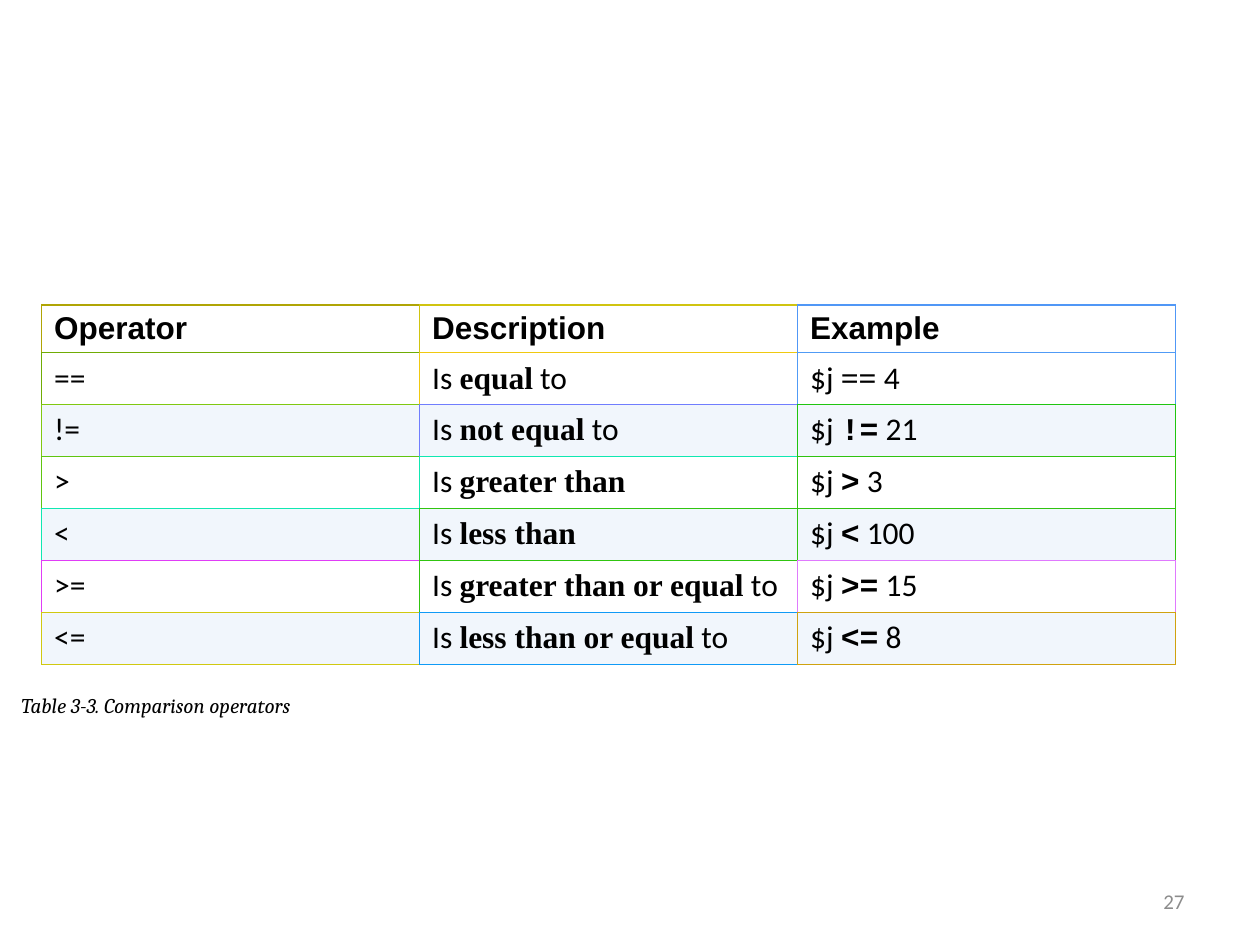
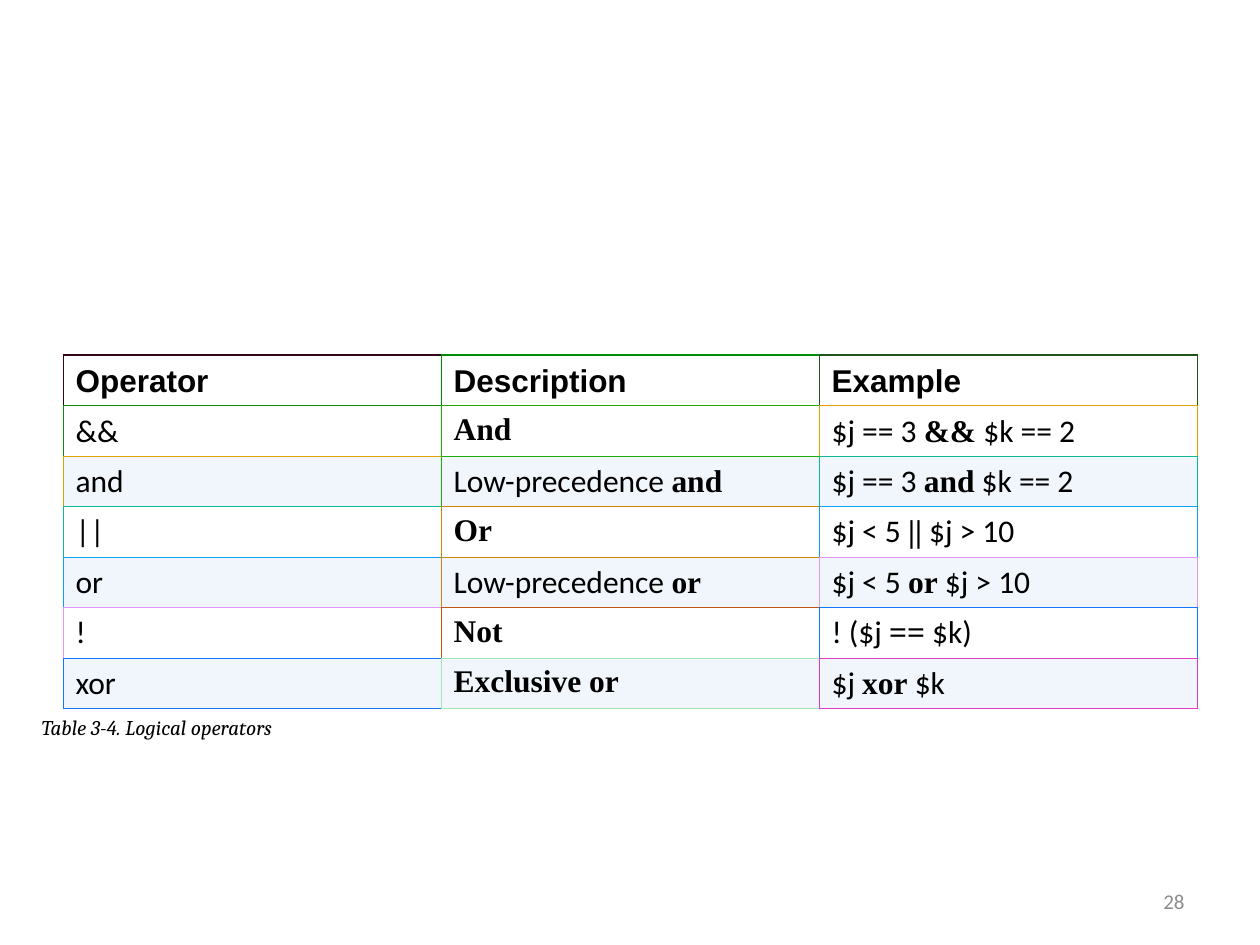
from dataclasses import dataclass

from lxml import etree
from pptx import Presentation
from pptx.dml.color import RGBColor
from pptx.enum.text import MSO_ANCHOR, PP_ALIGN
from pptx.oxml.ns import qn
from pptx.util import Inches, Pt

MIDDLE = MSO_ANCHOR.MIDDLE
BOTTOM = MSO_ANCHOR.BOTTOM
TOP = MSO_ANCHOR.TOP
LEFT = PP_ALIGN.LEFT
RIGHT = PP_ALIGN.RIGHT

BLACK = RGBColor(0x00, 0x00, 0x00)
PAGE_GRAY = RGBColor(0x8C, 0x8C, 0x8C)
BAND_BLUE = RGBColor(0xF1, 0xF6, 0xFC)

HEADER_FONT = "Arial"
BODY_FONT = "Calibri"
CAPTION_FONT = "Cambria"
BOLD_FONTS = {"*": "Times New Roman", "`": "Courier New"}

HEADERS = ("Operator", "Description", "Example")
COLUMN_WIDTH = 3
HEADER_HEIGHT = 0.38
ROW_HEIGHT = 0.4
BLANK_LAYOUT = 6


def border_grid(*rows: str) -> list[list[RGBColor]]:
    return [[RGBColor.from_string(value) for value in row.split()] for row in rows]


COMPARISON_BORDERS = border_grid(
    "B0A505 D0C410 5097F6",
    "70AC05 F0C910 509BF6",
    "80C810 707DFE 20C510",
    "60C510 10E8B1 30C310",
    "10E8B1 30C510 30C310",
    "E03DF6 30C510 E079FE",
    "D0C910 109AF6 D0A20F",
)
LOGICAL_BORDERS = border_grid(
    "30071A 008D0A 20541D",
    "108D0A 20AD05 E0A105",
    "E0A105 20AD05 10B897",
    "10B897 D0850A 109FF6",
    "109FF6 D0850A E097F6",
    "E097F6 C0570E 1077FE",
    "1077FE A0E7B1 E03BC2",
)


@dataclass(frozen=True)
class OperatorSlide:
    number: int
    caption: str
    caption_left: float
    caption_top: float
    table_left: float
    table_top: float
    borders: list[list[RGBColor]]
    rows: tuple[tuple[str, str, str], ...]


OPERATOR_SLIDES = (
    OperatorSlide(
        27, "Table 3-3. Comparison operators", 0.17, 5.5, 0.33, 2.42, COMPARISON_BORDERS,
        (
            ("==", "Is *equal* to", "$j *==* 4"),
            ("!=", "Is *not equal* to", "$j `!=` 21"),
            (">", "Is *greater than*", "$j `>` 3"),
            ("<", "Is *less than*", "$j `<` 100"),
            (">=", "Is *greater than or equal* to", "$j `>=` 15"),
            ("<=", "Is *less than or equal* to", "$j `<=` 8"),
        ),
    ),
    OperatorSlide(
        28, "Table 3-4. Logical operators", 0.33, 5.67, 0.5, 2.82, LOGICAL_BORDERS,
        (
            ("&&", "*And*", "$j == 3 *&&* $k == 2"),
            ("and", "Low-precedence *and*", "$j == 3 *and* $k == 2"),
            ("||", "*Or*", "$j < 5 *||* $j > 10"),
            ("or", "Low-precedence *or*", "$j < 5 *or* $j > 10"),
            ("!", "*Not*", "! ($j *==* $k)"),
            ("xor", "*Exclusive or*", "$j *xor* $k"),
        ),
    ),
)


def add_label(slide, text: str, box: tuple[float, float, float, float], font_name: str,
              color: RGBColor, alignment=LEFT, italic: bool = False, inset: float = 0) -> None:
    frame = slide.shapes.add_textbox(*map(Inches, box)).text_frame
    frame.word_wrap = True
    frame.vertical_anchor = MIDDLE
    frame.margin_left = frame.margin_right = Inches(inset)
    frame.margin_top = frame.margin_bottom = 0
    paragraph = frame.paragraphs[0]
    paragraph.text = text
    paragraph.alignment = alignment
    paragraph.font.name = font_name
    paragraph.font.size = Pt(12)
    paragraph.font.italic = italic
    paragraph.font.color.rgb = color


def write_cell(cell, text: str, is_header: bool) -> None:
    paragraph = cell.text_frame.paragraphs[0]
    paragraph.font.size = Pt(18)
    paragraph.font.color.rgb = BLACK
    cell.vertical_anchor = BOTTOM if is_header else TOP
    if is_header:
        paragraph.text = text
        paragraph.font.name = HEADER_FONT
        paragraph.font.bold = True
        return
    marker = next((mark for mark in BOLD_FONTS if mark in text), "*")
    for index, part in enumerate(text.split(marker)):
        if part:
            is_bold = index % 2 == 1
            run = paragraph.add_run()
            run.text = part
            run.font.name = BOLD_FONTS[marker] if is_bold else BODY_FONT
            run.font.bold = is_bold


def set_border(cell, side: str, color: RGBColor, width: float) -> None:
    properties = cell._tc.get_or_add_tcPr()
    line = etree.SubElement(properties, qn(f"a:ln{side}"), w=str(Pt(width)))
    fill = etree.SubElement(line, qn("a:solidFill"))
    etree.SubElement(fill, qn("a:srgbClr"), val=str(color))


def outline_cell(cell, borders: list[list[RGBColor]], row: int, column: int) -> None:
    last_row, last_column = len(borders) - 1, len(borders[row]) - 1
    own_color = borders[row][column]
    right_color = borders[row][min(column + 1, last_column)]
    below_color = borders[min(row + 1, last_row)][column]
    set_border(cell, "L", own_color, 0.5)
    set_border(cell, "R", right_color, 0.5)
    set_border(cell, "T", own_color, 1.5 if row == 0 else 0.5)
    set_border(cell, "B", below_color, 0.75 if row == last_row else 0.5)


def add_operator_table(slide, content: OperatorSlide) -> None:
    rows = (HEADERS, *content.rows)
    height = HEADER_HEIGHT + ROW_HEIGHT * len(content.rows)
    table = slide.shapes.add_table(
        len(rows), len(HEADERS), Inches(content.table_left), Inches(content.table_top),
        Inches(COLUMN_WIDTH * len(HEADERS)), Inches(height),
    ).table
    table.first_row = False
    table.horz_banding = False
    for row, texts in enumerate(rows):
        table.rows[row].height = Inches(ROW_HEIGHT if row else HEADER_HEIGHT)
        for column, text in enumerate(texts):
            cell = table.cell(row, column)
            write_cell(cell, text, row == 0)
            outline_cell(cell, content.borders, row, column)
            if row and row % 2 == 0:
                cell.fill.solid()
                cell.fill.fore_color.rgb = BAND_BLUE
            else:
                cell.fill.background()


def main() -> None:
    presentation = Presentation()
    presentation.slide_width = Inches(10)
    presentation.slide_height = Inches(7.5)
    for content in OPERATOR_SLIDES:
        slide = presentation.slides.add_slide(presentation.slide_layouts[BLANK_LAYOUT])
        add_operator_table(slide, content)
        add_label(slide, content.caption, (content.caption_left, content.caption_top, 4, 0.2),
                  CAPTION_FONT, BLACK, italic=True)
        add_label(slide, str(content.number), (7.17, 6.95, 2.33, 0.4),
                  BODY_FONT, PAGE_GRAY, RIGHT, inset=0.1)
    presentation.save("out.pptx")


if __name__ == "__main__":
    main()
